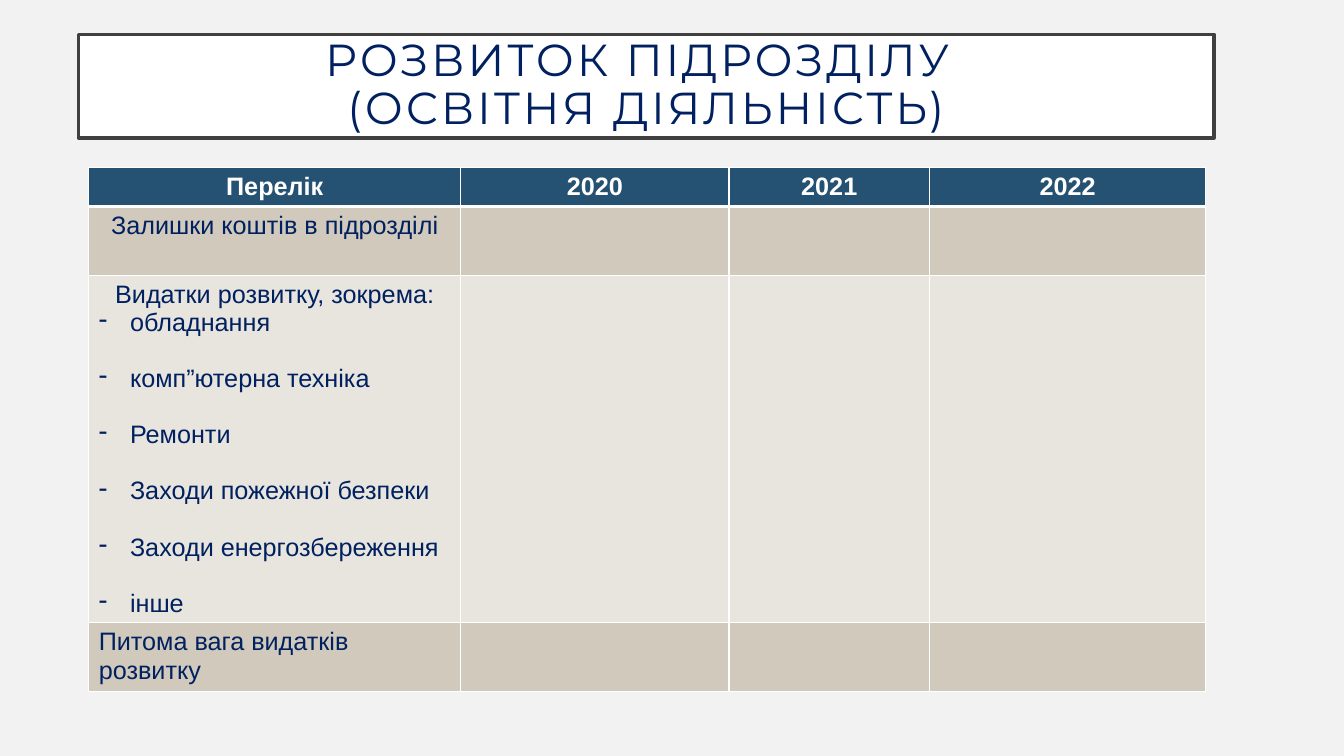
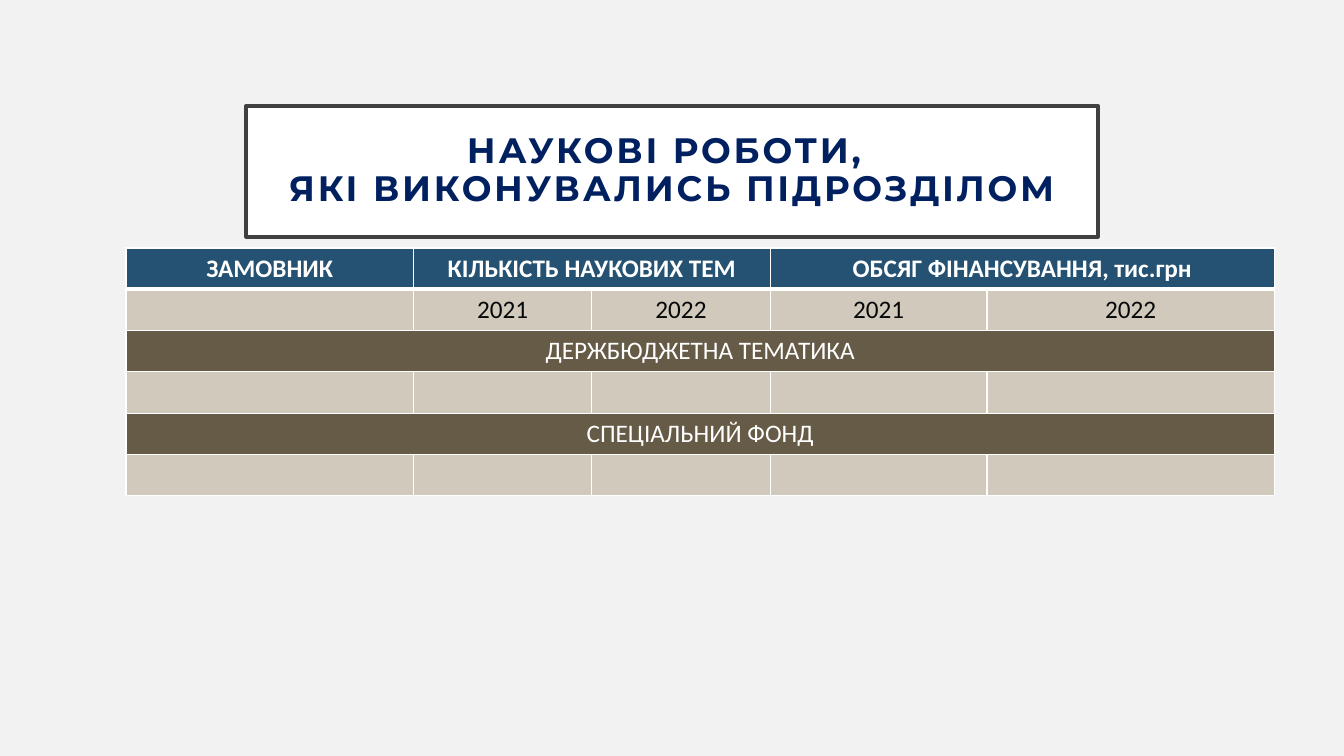
from lxml import etree
from pptx import Presentation
from pptx.dml.color import RGBColor
from pptx.enum import shapes, text
from pptx.oxml import ns
from pptx.util import Inches, Pt

NAVY, WHITE, INK = "002060", "FFFFFF", "070809"
BLUE, SAND, PALE, BROWN = "255272", "D1CABC", "E8E5DE", "655B46"
PAPER, FRAME = "F2F2F2", "404040"
MID, LEFT = text.PP_ALIGN.CENTER, text.PP_ALIGN.LEFT


def color(hue):
    return RGBColor.from_string(hue)


def paint(fill, hue):
    fill.solid()
    fill.fore_color.rgb = color(hue)


def node(root, tag, **attrs):
    """Append a DrawingML child element."""
    return etree.SubElement(root, ns.qn("a:" + tag), attrs)


class Deck:
    def __init__(self):
        self.show = Presentation()
        self.show.slide_width = Inches(13.33)
        self.show.slide_height = Inches(7.5)
        self.slide = None

    def page(self):
        self.slide = self.show.slides.add_slide(self.show.slide_layouts[6])
        paint(self.slide.background.fill, PAPER)

    def run(self, para, words, face, size, hue, bold=False):
        run = para.add_run()
        run.text = words
        font = run.font
        font.name, font.size, font.bold = face, Pt(size), bold
        font.color.rgb = color(hue)
        return run

    def title(self, box, lines, size, bold=False):
        """Draw the framed title with widely spaced letters."""
        shape = self.slide.shapes.add_shape(
            shapes.MSO_SHAPE.RECTANGLE, *map(Inches, box))
        shape.shadow.inherit = False
        paint(shape.fill, WHITE)
        shape.line.color.rgb = color(FRAME)
        shape.line.width = Pt(2.5)
        frame = shape.text_frame
        frame.word_wrap = True
        frame.vertical_anchor = text.MSO_ANCHOR.MIDDLE
        frame.margin_left = frame.margin_right = Inches(0.2)
        frame.margin_top = frame.margin_bottom = Inches(0.2)
        para = frame.paragraphs[0]
        para.alignment, para.line_spacing = MID, 0.9
        for i, line in enumerate(lines):
            if i:
                para.add_line_break()
            run = self.run(para, line, "Montserrat", size, NAVY, bold)
            run.font._element.set("spc", "200")

    def table(self, left, top, cols, rows, fills):
        """Add a table with one fill per row; the first row is the header."""
        grid = self.slide.shapes.add_table(
            len(rows), len(cols), Inches(left), Inches(top),
            Inches(sum(cols)), Inches(sum(rows))).table
        grid.horz_banding = False
        for col, width in zip(grid.columns, cols):
            col.width = Inches(width)
        for i, (row, high, hue) in enumerate(zip(grid.rows, rows, fills)):
            row.height = Inches(high)
            for cell in row.cells:
                self.edge(cell, 3 if i == 1 else 1, 3 if i == 0 else 1)
                paint(cell.fill, hue)
        return grid

    def edge(self, cell, top, low):
        """Draw white borders; top and low are widths in points."""
        props = cell._tc.get_or_add_tcPr()
        for side, width in zip("LRTB", (1, 1, top, low)):
            line = node(props, "ln" + side, w=str(Pt(width)))
            node(node(line, "solidFill"), "srgbClr", val=WHITE)

    def label(self, cell, words, face, hue, bold=False, align=MID):
        para = cell.text_frame.paragraphs[0]
        para.alignment = align
        self.run(para, words, face, 18, hue, bold)

    def dashes(self, cell, items, face, hue):
        """Add a dashed list with one empty line's height between items."""
        for i, item in enumerate(items):
            para = cell.text_frame.add_paragraph()
            para.space_before = Pt(20 if i else 0)
            props = para._p.get_or_add_pPr()
            props.set("marL", str(Inches(0.31)))
            props.set("indent", str(-Inches(0.31)))
            node(props, "buChar", char="-")
            self.run(para, item, face, 18, hue)


def growth(deck):
    deck.page()
    deck.title((0.78, 0.34, 11.26, 1.03),
               ("РОЗВИТОК ПІДРОЗДІЛУ ", "(ОСВІТНЯ ДІЯЛЬНІСТЬ)"), 32)
    grid = deck.table(0.88, 1.66, (3.69, 2.66, 1.99, 2.74),
                      (0.39, 0.68, 3.45, 0.68), (BLUE, SAND, PALE, SAND))
    for i, head in enumerate(("Перелік", "2020", "2021", "2022")):
        deck.label(grid.cell(0, i), head, "Arial", WHITE, True)
    names = (("Залишки коштів в підрозділі", MID),
             ("Видатки розвитку, зокрема:", MID),
             ("Питома вага видатків розвитку", LEFT))
    for i, (name, align) in enumerate(names, 1):
        deck.label(grid.cell(i, 0), name, "Arial", NAVY, align=align)
    deck.dashes(grid.cell(2, 0), (
        "обладнання", "комп”ютерна техніка", "Ремонти",
        "Заходи пожежної безпеки", "Заходи енергозбереження", "інше"),
        "Arial", NAVY)


def works(deck):
    deck.page()
    deck.title((2.44, 1.05, 8.45, 1.3),
               ("НАУКОВІ РОБОТИ, ", "ЯКІ ВИКОНУВАЛИСЬ ПІДРОЗДІЛОМ"),
               25.2, True)
    grid = deck.table(1.25, 2.46, (2.85, 1.77, 1.77, 2.15, 2.85), [0.41] * 6,
                      (BLUE, SAND, BROWN, SAND, BROWN, SAND))
    heads = ((0, 0, "ЗАМОВНИК"), (1, 2, "КІЛЬКІСТЬ НАУКОВИХ ТЕМ"),
             (3, 4, "ОБСЯГ ФІНАНСУВАННЯ, тис.грн"))
    for start, end, head in heads:
        if end > start:
            grid.cell(0, start).merge(grid.cell(0, end))
        deck.label(grid.cell(0, start), head, "Calibri", WHITE, True)
    for i, year in enumerate(("2021", "2022") * 2, 1):
        deck.label(grid.cell(1, i), year, "Calibri", INK)
    for i, fund in ((2, "ДЕРЖБЮДЖЕТНА ТЕМАТИКА"), (4, "СПЕЦІАЛЬНИЙ ФОНД")):
        grid.cell(i, 0).merge(grid.cell(i, 4))
        deck.label(grid.cell(i, 0), fund, "Calibri", WHITE)


def main():
    deck = Deck()
    growth(deck)
    works(deck)
    deck.show.save("out.pptx")


if __name__ == "__main__":
    main()
